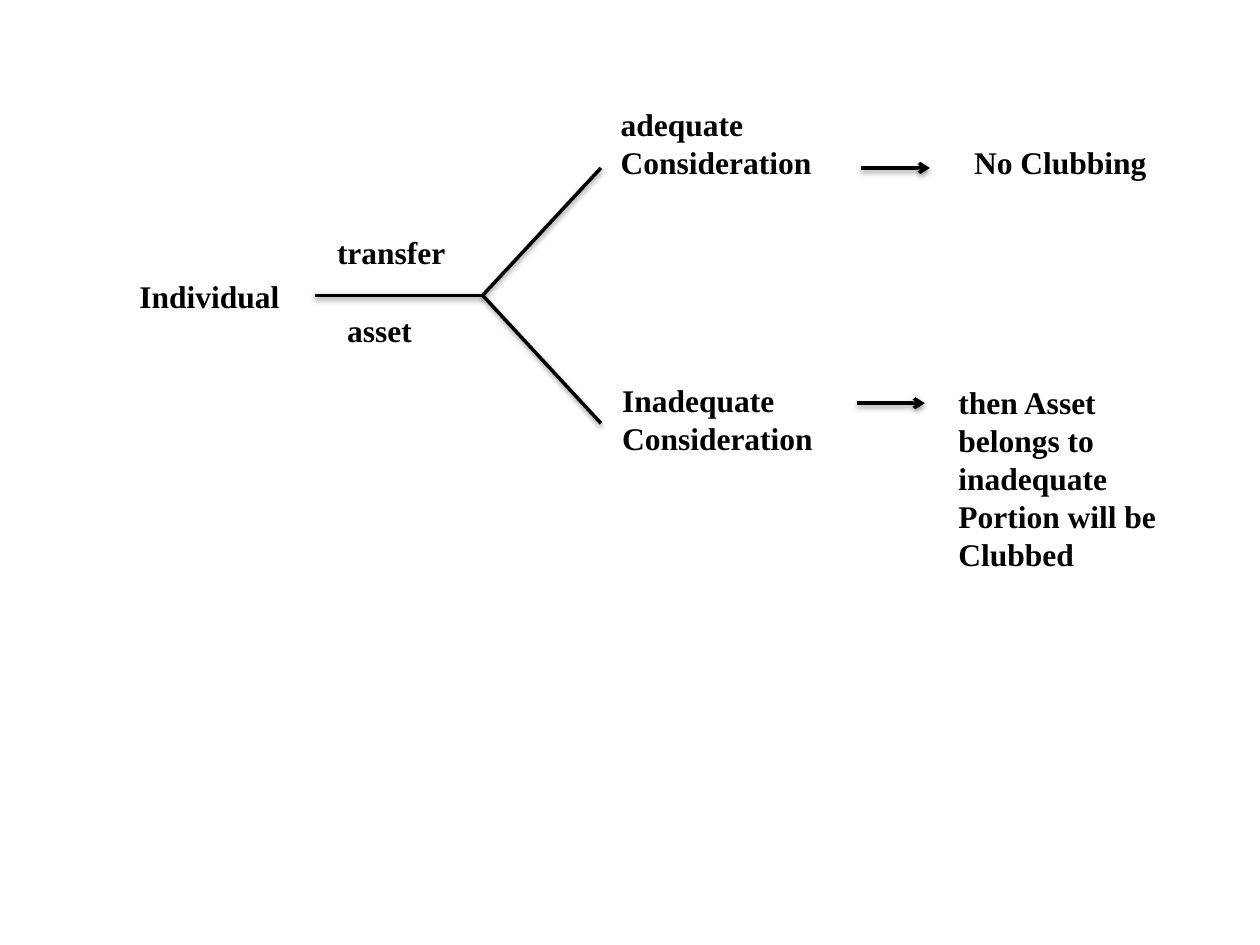
from typing import NamedTuple

from lxml import etree
from pptx import Presentation
from pptx.dml.color import RGBColor
from pptx.enum import shapes, text
from pptx.oxml import parse_xml
from pptx.oxml.ns import nsdecls, qn
from pptx.util import Pt

COLOURS = {"ink": "000000", "background": "FFFFFF"}
FONT = "Times New Roman"


class Label(NamedTuple):
    left: float
    top: float
    width: float
    height: float
    lines: tuple[str, ...]


class Branch(NamedTuple):
    start: tuple[float, float]
    end: tuple[float, float]
    arrow: bool = False


FORK = (275.8, 168.8)
UPPER_Y = 96
LOWER_Y = 241.9
OUTCOME_Y = 230.4
TIP_X = 343.4

BRANCHES = [
    Branch((180, 168.8), FORK),
    Branch(FORK, (TIP_X, UPPER_Y)),
    Branch(FORK, (TIP_X, LOWER_Y)),
    Branch((491.8, UPPER_Y), (531.4, UPPER_Y), arrow=True),
    Branch((489.6, OUTCOME_Y), (528.5, OUTCOME_Y), arrow=True),
]

LABELS = [
    Label(72.5, 154.9, 106.6, 29, ("Individual",)),
    Label(185.5, 129.8, 101.5, 29, ("transfer",)),
    Label(191.3, 174.4, 101.5, 29, ("asset",)),
    Label(347.6, 56.3, 140.4, 51, ("adequate", "Consideration")),
    Label(348.4, 214.3, 140.4, 51, ("Inadequate", "Consideration")),
    Label(549.6, 78.3, 146.2, 29, ("No Clubbing",)),
    Label(540.6, 215.5, 143.3, 116.6,
          ("then Asset", "belongs to inadequate Portion will be Clubbed")),
]


def draw_label(slide, label: Label) -> None:
    box = slide.shapes.add_textbox(
        Pt(label.left), Pt(label.top), Pt(label.width), Pt(label.height))
    frame = box.text_frame
    frame.word_wrap = True
    frame.auto_size = text.MSO_AUTO_SIZE.SHAPE_TO_FIT_TEXT
    frame.text = "\n".join(label.lines)
    for paragraph in frame.paragraphs:
        font = paragraph.font
        font.name = FONT
        font.size = Pt(18)
        font.bold = True
        font.color.rgb = RGBColor.from_string(COLOURS["ink"])


def add_soft_shadow(connector) -> None:
    """Give the connector a blurred shadow that falls straight down."""
    connector._element.spPr.append(parse_xml(
        f'<a:effectLst {nsdecls("a")}>'
        f'<a:outerShdw blurRad="{Pt(3.1)}" dist="{Pt(1.6)}" dir="5400000" rotWithShape="0">'
        f'<a:srgbClr val="{COLOURS["ink"]}"><a:alpha val="38000"/></a:srgbClr>'
        '</a:outerShdw></a:effectLst>'))


def draw_branch(slide, branch: Branch) -> None:
    connector = slide.shapes.add_connector(
        shapes.MSO_CONNECTOR.STRAIGHT,
        *(Pt(value) for value in branch.start + branch.end))
    connector.line.width = Pt(2)
    connector.line.color.rgb = RGBColor.from_string(COLOURS["ink"])
    if branch.arrow:
        outline = connector.line._get_or_add_ln()
        etree.SubElement(outline, qn("a:tailEnd"), type="arrow")
    add_soft_shadow(connector)


def main() -> None:
    presentation = Presentation()
    presentation.slide_width = Pt(720)
    presentation.slide_height = Pt(540)
    slide = presentation.slides.add_slide(presentation.slide_layouts[6])
    background = slide.background.fill
    background.solid()
    background.fore_color.rgb = RGBColor.from_string(COLOURS["background"])
    for branch in BRANCHES:
        draw_branch(slide, branch)
    for label in LABELS:
        draw_label(slide, label)
    presentation.save("out.pptx")


if __name__ == "__main__":
    main()
